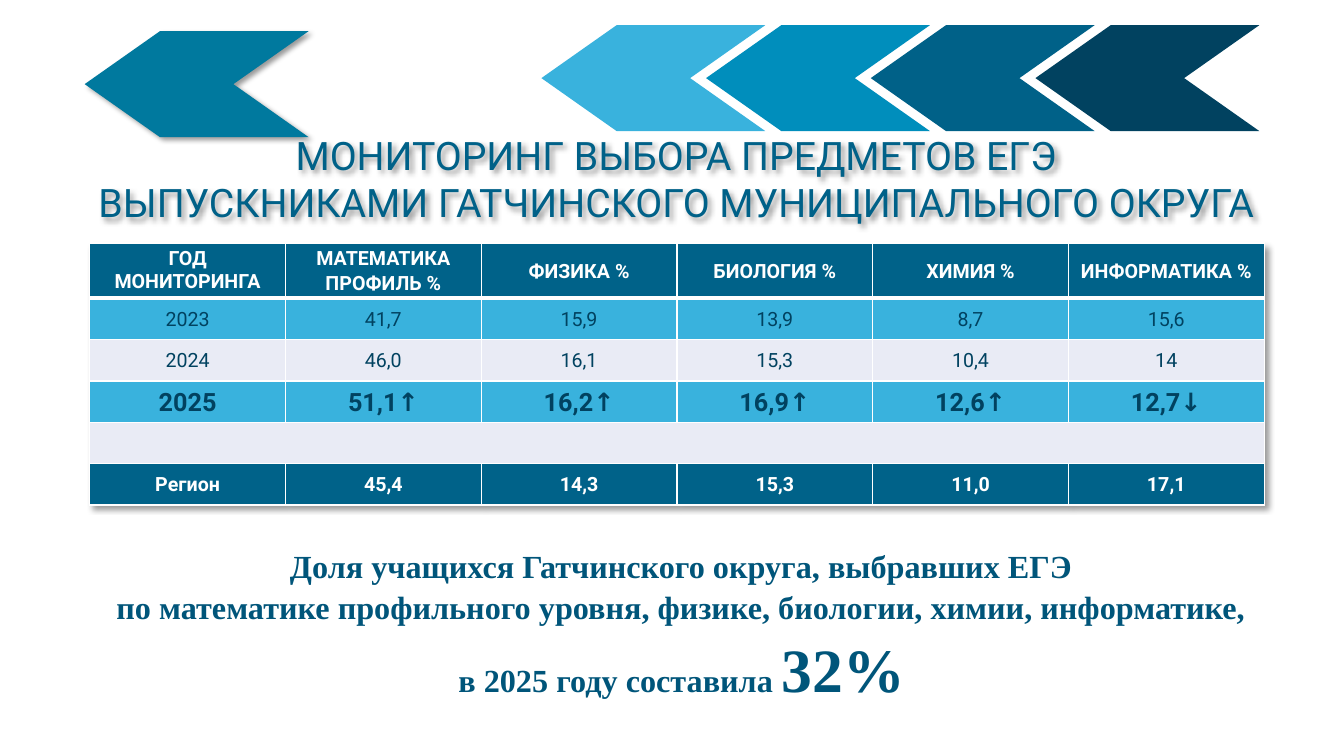
from dataclasses import dataclass

from lxml import etree
from pptx import Presentation
from pptx import util as u
from pptx.dml.color import RGBColor
from pptx.enum import shapes, text
from pptx.oxml import ns


@dataclass(frozen=True)
class Theme:
    sans: str = "Roboto"
    serif: str = "Times New Roman"
    white: str = "FFFFFF"
    sky: str = "39B2DD"
    azure: str = "008EBC"
    teal: str = "00799E"
    ocean: str = "006188"
    header: str = "006289"
    navy: str = "014260"
    pale: str = "E9EBF5"
    summary: str = "00557A"
    title_size: int = 28
    cell_size: int = 14
    current_size: int = 18
    summary_size: int = 23
    share_size: int = 44


class MonitoringSlide:
    def __init__(self, deck, theme):
        self.theme = theme
        self.slide = deck.slides.add_slide(deck.slide_layouts[6])

    def run(self, paragraph, words, size, color, font, bold=False):
        run = paragraph.add_run()
        run.text = words
        run.font.size = u.Pt(size)
        run.font.name = font
        run.font.bold = bold
        run.font.color.rgb = RGBColor.from_string(color)

    def shadow(self, effects):
        cast = etree.SubElement(effects, ns.qn("a:outerShdw"), blurRad=str(u.Pt(4)), dist=str(u.Pt(3)),
                                dir="2700000", algn="tl", rotWithShape="0")
        black = etree.SubElement(cast, ns.qn("a:srgbClr"), val="000000")
        etree.SubElement(black, ns.qn("a:alpha"), val="40000")

    def chevron(self, parent, left, top, color, shadowed=False):
        arrow = parent.add_shape(shapes.MSO_SHAPE.CHEVRON, u.Inches(left), u.Inches(top),
                                 u.Inches(2.22), u.Inches(1.05))
        arrow.adjustments[0] = 0.71
        arrow.fill.solid()
        arrow.fill.fore_color.rgb = RGBColor.from_string(color)
        arrow.line.fill.background()
        arrow.shadow.inherit = False
        properties = arrow._element.spPr
        properties.find(ns.qn("a:xfrm")).set("flipH", "1")
        if shadowed:
            self.shadow(properties.find(ns.qn("a:effectLst")))

    def chevron_row(self, left, top, span, colors):
        row = self.slide.shapes.add_group_shape()
        for i, color in enumerate(colors):
            self.chevron(row.shapes, left + span * i / (len(colors) - 1), top, color)

    def text_box(self, left, top, width, height, paragraphs, color, font,
                 bold=False, spacing=None, top_inset=0.05, shadowed=False):
        box = self.slide.shapes.add_textbox(*map(u.Inches, (left, top, width, height)))
        frame = box.text_frame
        frame.word_wrap = True
        frame.auto_size = text.MSO_AUTO_SIZE.SHAPE_TO_FIT_TEXT
        frame.margin_top = u.Inches(top_inset)
        for i, runs in enumerate(paragraphs):
            paragraph = frame.add_paragraph() if i else frame.paragraphs[0]
            paragraph.alignment = text.PP_ALIGN.CENTER
            paragraph.line_spacing = spacing
            for words, size in runs:
                for j, line in enumerate(words.split("\n")):
                    if j:
                        paragraph.add_line_break()
                    self.run(paragraph, line, size, color, font, bold)
        if shadowed:
            self.shadow(etree.SubElement(box._element.spPr, ns.qn("a:effectLst")))

    def borders(self, cell, bottom):
        properties = cell._tc.get_or_add_tcPr()
        for i, (side, width) in enumerate((("L", 1), ("R", 1), ("T", 1), ("B", bottom))):
            line = etree.Element(ns.qn(f"a:ln{side}"), w=str(u.Pt(width)))
            fill = etree.SubElement(line, ns.qn("a:solidFill"))
            etree.SubElement(fill, ns.qn("a:srgbClr"), val=self.theme.white)
            properties.insert(i, line)

    def cell(self, cell, words, fill, color, size, bold, bottom):
        cell.fill.solid()
        cell.fill.fore_color.rgb = RGBColor.from_string(fill)
        self.borders(cell, bottom)
        cell.vertical_anchor = text.MSO_ANCHOR.MIDDLE
        cell.margin_left = cell.margin_right = u.Inches(0.07)
        cell.margin_top = cell.margin_bottom = 0
        lines = words.split("\n") if words else []
        for i, line in enumerate(lines):
            paragraph = cell.text_frame.add_paragraph() if i else cell.text_frame.paragraphs[0]
            paragraph.alignment = text.PP_ALIGN.CENTER
            if len(lines) == 1:
                paragraph.line_spacing = 1.07
                paragraph.space_after = u.Pt(8)
            self.run(paragraph, line, size, color, self.theme.sans, bold)

    def table(self, left, top, width, heights, rows, styles):
        columns = len(rows[0])
        frame = self.slide.shapes.add_table(len(rows), columns, u.Inches(left), u.Inches(top),
                                            u.Inches(width), u.Inches(sum(heights)))
        results = frame.table
        for r, (values, style) in enumerate(zip(rows, styles)):
            results.rows[r].height = u.Inches(heights[r])
            for c, words in enumerate(values):
                self.cell(results.cell(r, c), words, *style, bottom=1 if r else 3)
            if not any(values):
                results.cell(r, 0).merge(results.cell(r, columns - 1))
        effects = etree.Element(ns.qn("a:effectLst"))
        self.shadow(effects)
        results._tbl.tblPr.insert(0, effects)


def main():
    theme = Theme()
    deck = Presentation()
    deck.slide_width, deck.slide_height = u.Inches(13.33), u.Inches(7.5)
    page = MonitoringSlide(deck, theme)

    page.text_box(0.04, 1.25, 13.33, 1.04, [
        [("МОНИТОРИНГ ВЫБОРА ПРЕДМЕТОВ ЕГЭ", theme.title_size)],
        [("ВЫПУСКНИКАМИ ГАТЧИНСКОГО МУНИЦИПАЛЬНОГО ОКРУГА", theme.title_size)],
    ], theme.ocean, theme.sans, shadowed=True)

    heading = (theme.header, theme.white, theme.cell_size, True)
    page.table(0.89, 2.41, 11.65, [0.55] + [0.41] * 5, [
        ["ГОД\nМОНИТОРИНГА", "МАТЕМАТИКА ПРОФИЛЬ %", "ФИЗИКА %", "БИОЛОГИЯ %", "ХИМИЯ %", "ИНФОРМАТИКА %"],
        ["2023", "41,7", "15,9", "13,9", "8,7", "15,6"],
        ["2024", "46,0", "16,1", "15,3", "10,4", "14"],
        ["2025", "51,1↑", "16,2↑", "16,9↑", "12,6↑", "12,7↓"],
        [""] * 6,
        ["Регион", "45,4", "14,3", "15,3", "11,0", "17,1"],
    ], [
        heading,
        (theme.sky, theme.navy, theme.cell_size, False),
        (theme.pale, theme.navy, theme.cell_size, False),
        (theme.sky, theme.navy, theme.current_size, True),
        (theme.pale, theme.navy, theme.cell_size, False),
        heading,
    ])

    page.chevron_row(5.37, 0.25, 4.9, [theme.sky, theme.azure, theme.ocean, theme.navy])
    page.chevron(page.slide.shapes, 0.84, 0.31, theme.teal, shadowed=True)

    page.text_box(0.89, 5.01, 11.74, 2.05, [
        [("Доля учащихся Гатчинского округа, выбравших ЕГЭ\n"
          "по математике профильного уровня, физике, биологии, химии, информатике,", theme.summary_size)],
        [("в 2025 году составила ", theme.summary_size), ("32%", theme.share_size)],
    ], theme.summary, theme.serif, bold=True, spacing=1.07, top_inset=0.38)

    deck.save("out.pptx")


if __name__ == "__main__":
    main()
